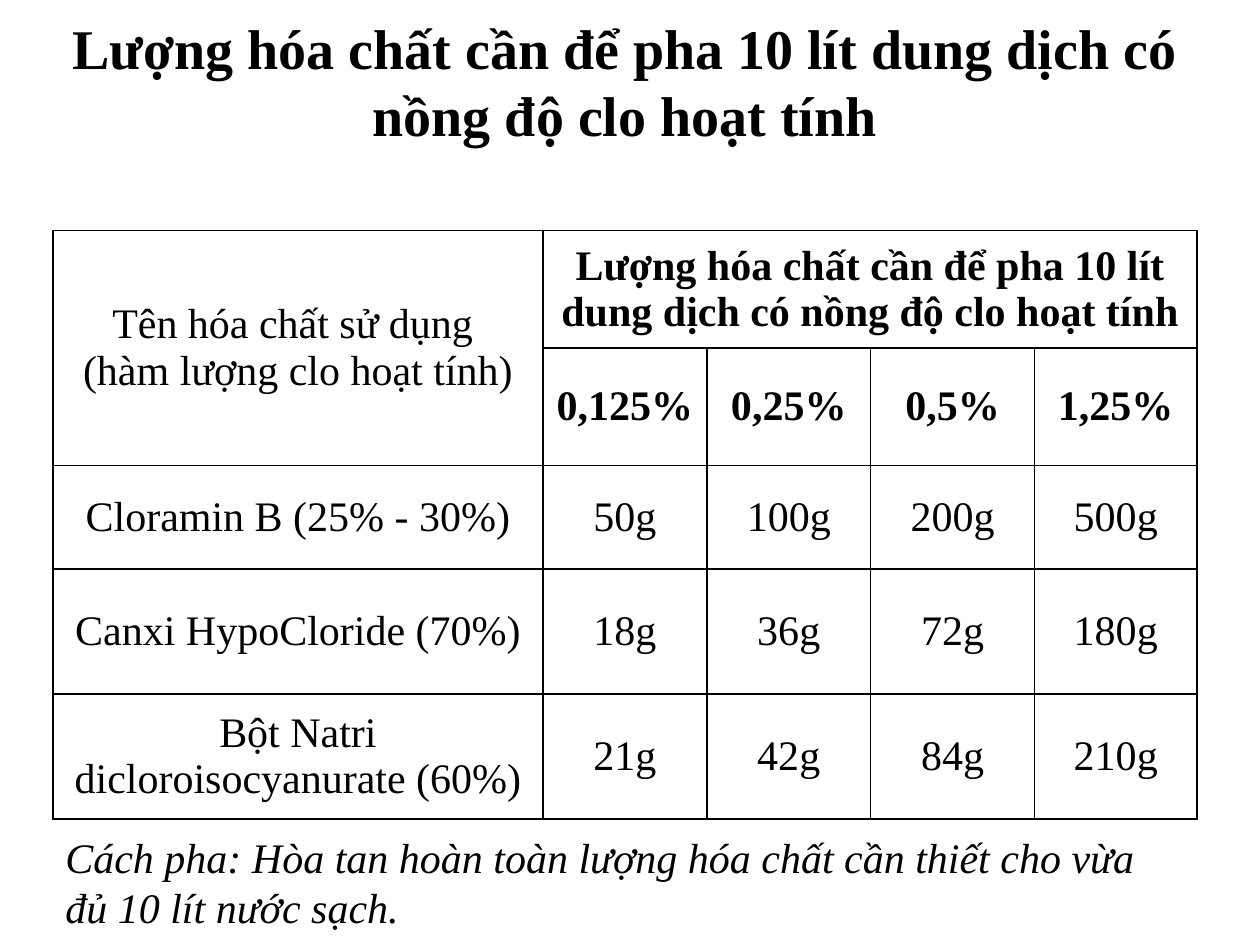
from dataclasses import dataclass

from lxml import etree
from pptx import Presentation
from pptx import util as u
from pptx.dml.color import RGBColor
from pptx.enum import text
from pptx.oxml import ns


@dataclass(frozen=True)
class Theme:
    font: str = "Times New Roman"
    ink: str = "000000"
    title_size: int = 32
    body_size: int = 24
    border_width: int = 1


THEME = Theme()
TITLE = "Lượng hóa chất cần để pha 10 lít dung dịch có nồng độ clo hoạt tính"
NAME_HEADING = "Tên hóa chất sử dụng \v(hàm lượng clo hoạt tính)"
NOTE = ("Cách pha: Hòa tan hoàn toàn lượng hóa chất cần thiết cho vừa "
        "đủ 10 lít nước sạch.")
CONCENTRATIONS = ["0,125%", "0,25%", "0,5%", "1,25%"]
AMOUNTS = [
    ["Cloramin B (25% - 30%)", "50g", "100g", "200g", "500g"],
    ["Canxi HypoCloride (70%)", "18g", "36g", "72g", "180g"],
    ["Bột Natri dicloroisocyanurate (60%)", "21g", "42g", "84g", "210g"],
]
COLUMN_WIDTHS = [3.89, 1.3, 1.3, 1.3, 1.29]
ROW_HEIGHTS = [0.93, 0.93, 0.82, 0.99, 0.99]


def write(frame, content, size, align, bold=False, italic=False):
    frame.text = content
    frame.word_wrap = True
    for paragraph in frame.paragraphs:
        paragraph.alignment = align
        font = paragraph.font
        font.name, font.size = THEME.font, u.Pt(size)
        font.bold, font.italic = bold, italic
        font.color.rgb = RGBColor.from_string(THEME.ink)


def add_text(slide, box, content, size, align, **style):
    frame = slide.shapes.add_textbox(*map(u.Inches, box)).text_frame
    frame.vertical_anchor = text.MSO_ANCHOR.MIDDLE
    write(frame, content, size, align, **style)


def add_borders(cell):
    """Draw the four edges; they must precede the fill in the cell properties."""
    properties = cell._tc.get_or_add_tcPr()
    for index, edge in enumerate(("a:lnL", "a:lnR", "a:lnT", "a:lnB")):
        line = etree.Element(ns.qn(edge), w=str(u.Pt(THEME.border_width)))
        fill = etree.SubElement(line, ns.qn("a:solidFill"))
        etree.SubElement(fill, ns.qn("a:srgbClr"), val=THEME.ink)
        properties.insert(index, line)


def add_dosage_table(slide, box):
    rows = [[NAME_HEADING, TITLE, "", "", ""], ["", *CONCENTRATIONS], *AMOUNTS]
    frame = slide.shapes.add_table(len(rows), len(COLUMN_WIDTHS), *map(u.Inches, box))
    table = frame.table
    table.first_row = table.horz_banding = False
    left, top, width, height = box
    for column, share in zip(table.columns, COLUMN_WIDTHS):
        column.width = u.Inches(width * share / sum(COLUMN_WIDTHS))
    for row, share in zip(table.rows, ROW_HEIGHTS):
        row.height = u.Inches(height * share / sum(ROW_HEIGHTS))

    table.cell(0, 0).merge(table.cell(1, 0))
    table.cell(0, 1).merge(table.cell(0, len(COLUMN_WIDTHS) - 1))
    for row_index, row in enumerate(rows):
        for column_index, content in enumerate(row):
            cell = table.cell(row_index, column_index)
            cell.fill.background()
            cell.vertical_anchor = text.MSO_ANCHOR.MIDDLE
            write(cell.text_frame, content, THEME.body_size, text.PP_ALIGN.CENTER,
                  bold=row_index < 2 and column_index > 0)
            add_borders(cell)


def build_slide(presentation):
    slide = presentation.slides.add_slide(presentation.slide_layouts[6])
    add_text(slide, (0.25, 0.05, 9.42, 1.18), TITLE, THEME.title_size,
             text.PP_ALIGN.CENTER, bold=True)
    add_dosage_table(slide, (0.42, 1.83, 9.08, 4.67))
    add_text(slide, (0.42, 6.54, 9.08, 0.91), NOTE, THEME.body_size,
             text.PP_ALIGN.LEFT, italic=True)


def main():
    presentation = Presentation()
    presentation.slide_width = u.Inches(10)
    presentation.slide_height = u.Inches(7.5)
    build_slide(presentation)
    presentation.save("out.pptx")


if __name__ == "__main__":
    main()
